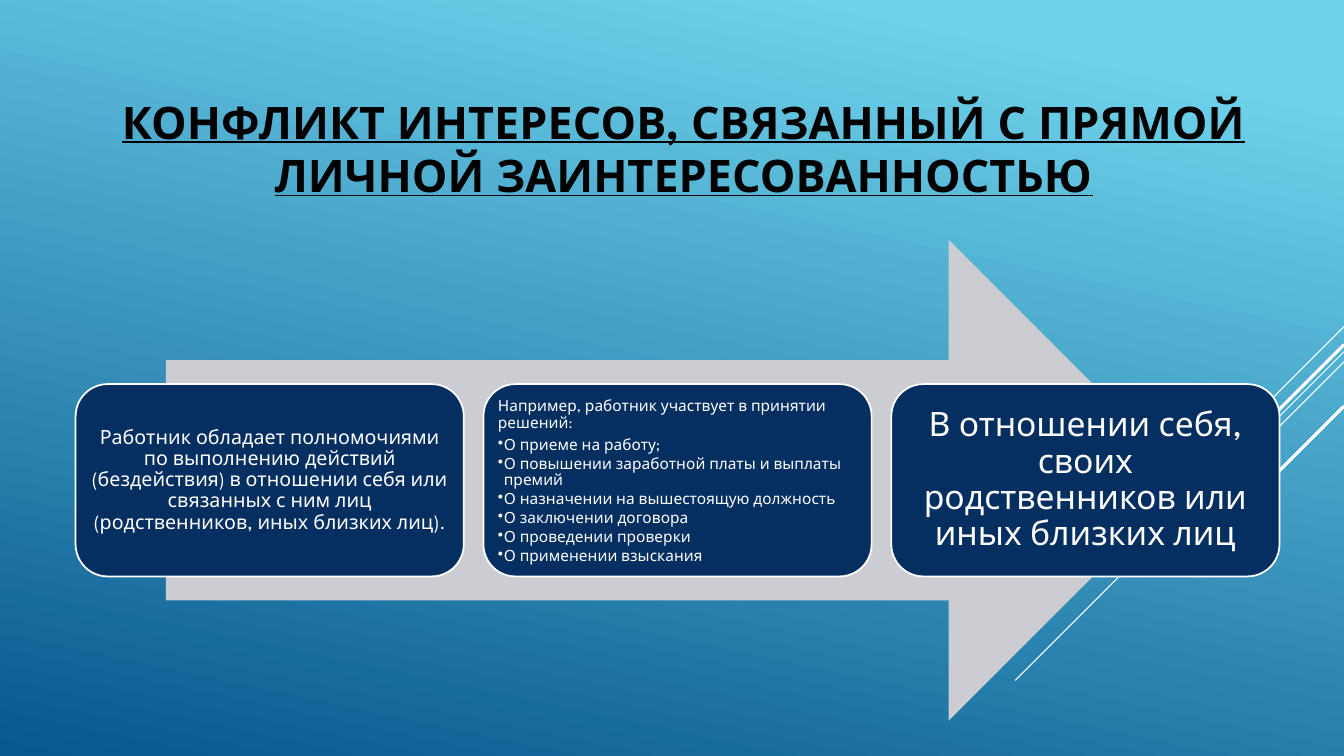
from pptx import Presentation
from pptx.dml.color import RGBColor
from pptx.enum.shapes import MSO_CONNECTOR, MSO_SHAPE
from pptx.enum.text import MSO_ANCHOR, PP_ALIGN
from pptx.oxml.ns import qn
from pptx.util import Inches, Pt
from lxml.etree import SubElement

SKY = RGBColor(0x6E, 0xD2, 0xEB)
SEA = RGBColor(0x06, 0x58, 0x8E)
NAVY = RGBColor(0x05, 0x2F, 0x61)
GREY = RGBColor(0xCC, 0xCD, 0xD2)
WHITE = RGBColor(0xFF, 0xFF, 0xFF)
BLACK = RGBColor(0, 0, 0)
FONT = "League Spartan"

TITLE = "КОНФЛИКТ ИНТЕРЕСОВ, СВЯЗАННЫЙ С ПРЯМОЙ ЛИЧНОЙ ЗАИНТЕРЕСОВАННОСТЬЮ"
# Each card: text size, inset, lead text, bullets
CARDS = [
    (14, 0.06, "Работник обладает полномочиями по выполнению действий "
     "(бездействия) в отношении себя или связанных с ним лиц "
     "(родственников, иных близких лиц).", []),
    (11, 0.05, "Например, работник участвует в принятии решений:", [
        "О приеме на работу;",
        "О повышении заработной платы и выплаты премий",
        "О назначении на вышестоящую должность",
        "О заключении договора",
        "О проведении проверки",
        "О применении взыскания"]),
    (24, 0.1, "В отношении себя, своих родственников или иных близких лиц", []),
]
# Each ray: right end height, run to the lower left, width
RAYS = [(3.24, 1, 0.75), (3.49, 3.26, 0.75), (3.59, 2.07, 0.75),
        (3.42, 1.91, 2.25), (4.03, 1.39, 2.25)]


def style(item, form):
    for name, value in form.items():
        setattr(item, name, value)


def write(para, text, form, **font):
    style(para, form)
    run = para.add_run()
    run.text = text
    style(run.font, {"name": FONT, **font})
    return run


def paint(slide):
    fill = slide.background.fill
    fill.gradient()
    fill.gradient_angle = 258
    for stop, (place, color) in zip(fill.gradient_stops, [(0.1, SKY), (1, SEA)]):
        stop.position = place
        stop.color.rgb = color


def add_rays(slide, right):
    for top, run, width in RAYS:
        ray = slide.shapes.add_connector(
            MSO_CONNECTOR.STRAIGHT, Inches(right), Inches(top),
            Inches(right - run), Inches(top + run))
        ray.line.color.rgb = WHITE
        ray.line.width = Pt(width)
        SubElement(ray._element.spPr, qn("a:effectLst"))


def add_title(slide, left, top, width, height):
    box = slide.shapes.add_textbox(*map(Inches, (left, top, width, height)))
    frame = box.text_frame
    style(frame, {"word_wrap": True, "vertical_anchor": MSO_ANCHOR.MIDDLE})
    run = write(frame.paragraphs[0], TITLE, {"alignment": PP_ALIGN.CENTER},
                size=Pt(32), bold=True, underline=True)
    run.font.color.rgb = BLACK


def add_form(slide, kind, color, *box):
    form = slide.shapes.add_shape(kind, *map(Inches, box))
    form.shadow.inherit = False
    form.fill.solid()
    form.fill.fore_color.rgb = color
    form.line.fill.background()
    return form


def add_card(slide, card, *box):
    size, inset, lead, points = card
    form = add_form(slide, MSO_SHAPE.ROUNDED_RECTANGLE, NAVY, *box)
    form.line.color.rgb = WHITE
    form.line.width = Pt(1.25)
    frame = form.text_frame
    style(frame, {f"margin_{side}": Inches(inset)
                  for side in ("left", "top", "right", "bottom")})
    style(frame, {"word_wrap": True, "vertical_anchor":
                  MSO_ANCHOR.TOP if points else MSO_ANCHOR.MIDDLE})
    align = PP_ALIGN.LEFT if points else PP_ALIGN.CENTER
    for i, text in enumerate([lead] + points):
        para = frame.add_paragraph() if i else frame.paragraphs[0]
        run = write(para, text, {
            "alignment": align, "line_spacing": 0.9, "level": 1 if i else 0,
            "space_after": Pt(size * (0.15 if i else 0.35))}, size=Pt(size))
        run.font.color.rgb = WHITE
        if i:
            props = para._p.get_or_add_pPr()
            props.set("marL", str(Inches(0.06)))
            props.set("indent", str(Inches(-0.06)))
            SubElement(props, qn("a:buChar"), char="•")


def add_flow(slide, left, top, width, height):
    # Arrow spans 85% of the region; cards fill its middle 40%
    span = width * 0.85
    add_form(slide, MSO_SHAPE.RIGHT_ARROW, GREY,
             left + (width - span) / 2, top, span, height)
    wide = 3.85
    step = (width - wide) / (len(CARDS) - 1)
    for i, card in enumerate(CARDS):
        add_card(slide, card, left + i * step, top + height * 0.3,
                 wide, height * 0.4)


def main():
    deck = Presentation()
    style(deck, {"slide_width": Inches(13.33), "slide_height": Inches(7.5)})
    slide = deck.slides.add_slide(deck.slide_layouts[6])
    paint(slide)
    add_rays(slide, 13.33)
    add_title(slide, 0.75, 0.75, 12.06, 1.44)
    add_flow(slide, 0.75, 2.38, 11.94, 4.77)
    deck.save("out.pptx")


if __name__ == "__main__":
    main()
